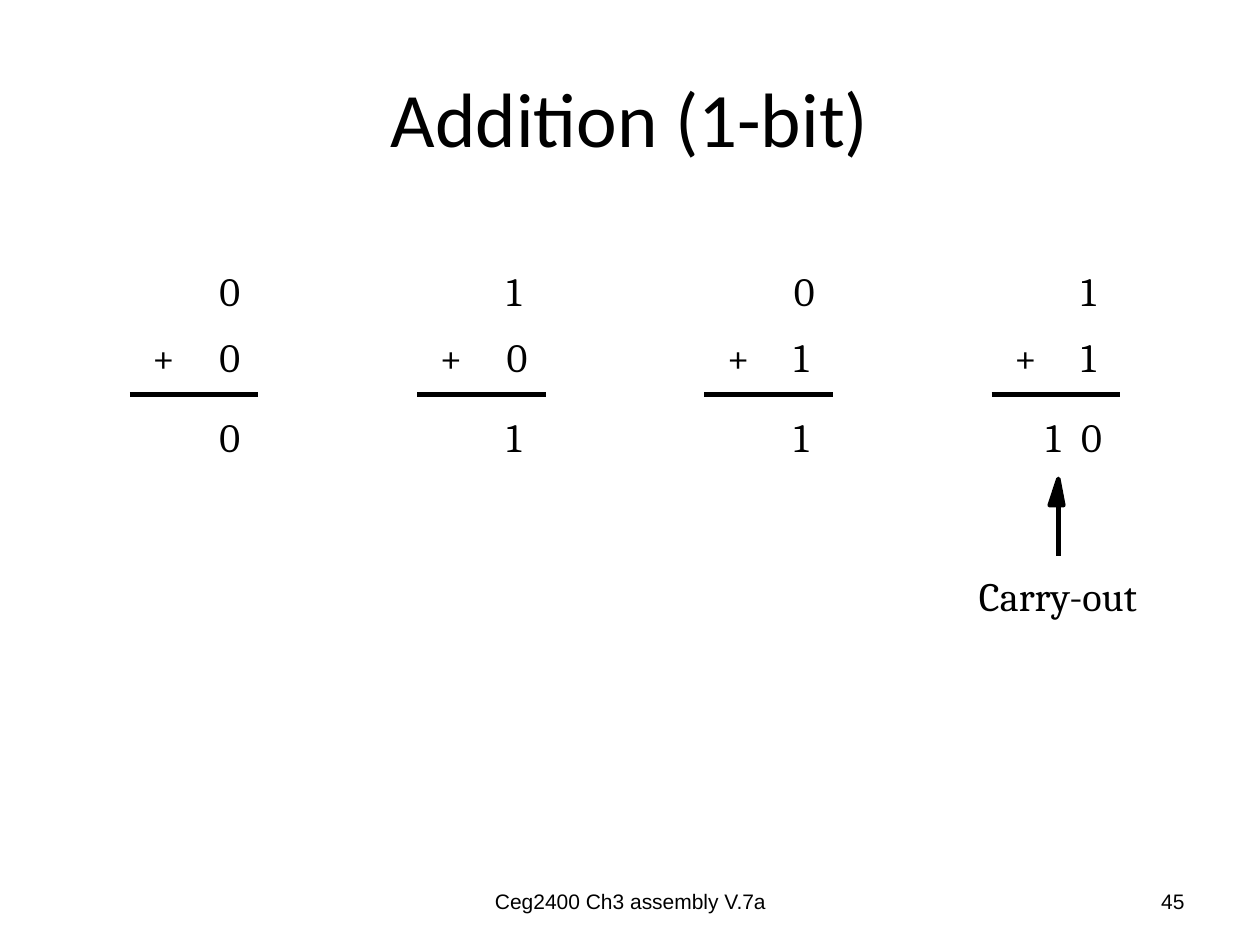
from dataclasses import dataclass

from pptx import Presentation
from pptx.dml.color import RGBColor
from pptx.enum import shapes, text
from pptx.oxml import parse_xml
from pptx.oxml.ns import nsdecls
from pptx.slide import Slide
from pptx.util import Inches, Pt

COLORS = {"ink": "000000", "paper": "FFFFFF"}
INK = RGBColor.from_string(COLORS["ink"])
STROKE = Pt(2.5)

FIRST_LEFT, SUM_PITCH = 1.03, 2.28
PLUS_OFFSET, UNITS_OFFSET, CARRY_OFFSET, RULE_LENGTH = 0.18, 0.71, 0.43, 1.02
FIRST_TOP, SECOND_TOP, RULE_TOP, RESULT_TOP = 2.11, 2.64, 3.13, 3.27
DIGIT_WIDTH, DIGIT_HEIGHT = 0.18, 0.38


@dataclass
class Addition:
    first: str
    second: str
    result: str
    carry: str = ""


ADDITIONS = [
    Addition("0", "0", "0"),
    Addition("1", "0", "1"),
    Addition("0", "1", "1"),
    Addition("1", "1", "0", carry="1"),
]


def style_text(frame, wording: str, font: str, size: float, align) -> None:
    frame.text = wording
    paragraph = frame.paragraphs[0]
    paragraph.alignment = align
    for name, value in {"name": font, "size": Pt(size)}.items():
        setattr(paragraph.runs[0].font, name, value)
    paragraph.runs[0].font.color.rgb = INK


def add_figure(slide: Slide, wording: str, left: float, top: float,
               width: float = DIGIT_WIDTH) -> None:
    """Add a tight serif text box, as used in the sums."""
    frame = slide.shapes.add_textbox(
        Inches(left), Inches(top), Inches(width), Inches(DIGIT_HEIGHT)).text_frame
    box_format = {
        "margin_left": 0, "margin_right": 0, "margin_top": 0, "margin_bottom": 0,
        "word_wrap": False, "auto_size": text.MSO_AUTO_SIZE.SHAPE_TO_FIT_TEXT,
    }
    for name, value in box_format.items():
        setattr(frame, name, value)
    style_text(frame, wording, "Cambria", 23, text.PP_ALIGN.LEFT)


def add_line(slide: Slide, x1: float, y1: float, x2: float, y2: float) -> None:
    line = slide.shapes.add_connector(
        shapes.MSO_CONNECTOR.STRAIGHT, Inches(x1), Inches(y1), Inches(x2), Inches(y2))
    line.line.color.rgb = INK
    line.line.width = STROKE
    line._element.spPr.append(parse_xml(f"<a:effectLst {nsdecls('a')}/>"))


def add_sum(slide: Slide, addition: Addition, left: float) -> None:
    units = left + UNITS_OFFSET
    add_line(slide, left, RULE_TOP, left + RULE_LENGTH, RULE_TOP)
    add_figure(slide, addition.first, units, FIRST_TOP)
    add_figure(slide, "+", left + PLUS_OFFSET, SECOND_TOP, 0.19)
    add_figure(slide, addition.second, units, SECOND_TOP)
    add_figure(slide, addition.result, units, RESULT_TOP)
    if addition.carry:
        add_figure(slide, addition.carry, left + CARRY_OFFSET, RESULT_TOP)


def add_carry_arrow(slide: Slide) -> None:
    add_line(slide, 8.4, 3.99, 8.4, 4.41)
    builder = slide.shapes.build_freeform(Inches(8.44), Inches(4.01), scale=1.0)
    builder.add_line_segments(
        [(Inches(8.4), Inches(3.8)), (Inches(8.33), Inches(4.01))], close=True)
    head = builder.convert_to_shape()
    head.shadow.inherit = False
    head.fill.solid()
    head.fill.fore_color.rgb = INK
    head.line.color.rgb = INK
    head.line.width = STROKE


def add_footer(slide: Slide, wording: str, left: float, width: float, align) -> None:
    frame = slide.shapes.add_textbox(
        Inches(left), Inches(6.95), Inches(width), Inches(0.4)).text_frame
    frame.word_wrap = True
    frame.vertical_anchor = text.MSO_ANCHOR.MIDDLE
    style_text(frame, wording, "Arial", 12, align)


def main() -> None:
    deck = Presentation()
    deck.slide_width, deck.slide_height = Inches(10), Inches(7.5)
    slide = deck.slides.add_slide(deck.slide_layouts[5])
    slide.background.fill.solid()
    slide.background.fill.fore_color.rgb = RGBColor.from_string(COLORS["paper"])

    title = slide.shapes.title
    title.left, title.top = Inches(0.5), Inches(0.3)
    title.width, title.height = Inches(9), Inches(1.25)
    title.text_frame.vertical_anchor = text.MSO_ANCHOR.MIDDLE
    style_text(title.text_frame, "Addition (1-bit)", "Calibri", 44, text.PP_ALIGN.CENTER)

    for column, addition in enumerate(ADDITIONS):
        add_sum(slide, addition, FIRST_LEFT + column * SUM_PITCH)
    add_carry_arrow(slide)
    add_figure(slide, "Carry-out", 7.77, 4.53, 1.33)

    add_footer(slide, "Ceg2400 Ch3 assembly V.7a", 3.42, 3.17, text.PP_ALIGN.CENTER)
    add_footer(slide, "45", 7.17, 2.33, text.PP_ALIGN.RIGHT)
    deck.save("out.pptx")


if __name__ == "__main__":
    main()
